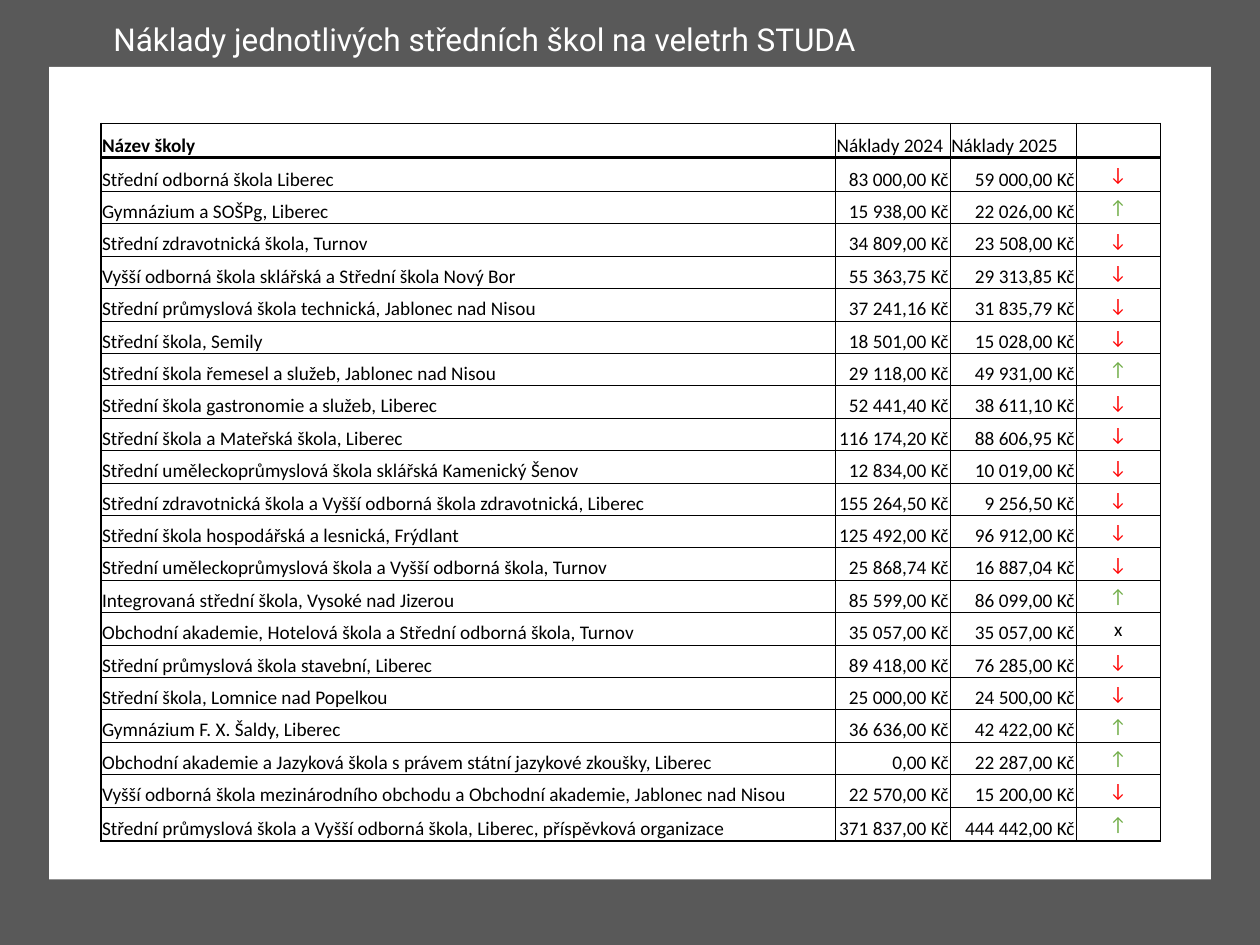
from lxml.etree import SubElement
from pptx import Presentation
from pptx.dml.color import RGBColor
from pptx.enum.shapes import MSO_SHAPE as Shape
from pptx.enum.text import MSO_ANCHOR as Anchor, PP_ALIGN as Align
from pptx.oxml.ns import qn
from pptx.util import Inches, Pt

COLORS = {
    "backdrop": "595959",
    "white": "FFFFFF",
    "black": "000000",
    "↓": "FF0000",
    "↑": "70AD47",
    "x": "000000",
}

# School, costs in 2024, costs in 2025
COSTS = [
    ("Střední odborná škola Liberec", 83000, 59000),
    ("Gymnázium a SOŠPg, Liberec", 15938, 22026),
    ("Střední zdravotnická škola, Turnov", 34809, 23508),
    ("Vyšší odborná škola sklářská a Střední škola Nový Bor", 55363.75, 29313.85),
    ("Střední průmyslová škola technická, Jablonec nad Nisou", 37241.16, 31835.79),
    ("Střední škola, Semily", 18501, 15028),
    ("Střední škola řemesel a služeb, Jablonec nad Nisou", 29118, 49931),
    ("Střední škola gastronomie a služeb, Liberec", 52441.40, 38611.10),
    ("Střední škola a Mateřská škola, Liberec", 116174.20, 88606.95),
    ("Střední uměleckoprůmyslová škola sklářská Kamenický Šenov", 12834, 10019),
    ("Střední zdravotnická škola a Vyšší odborná škola zdravotnická, Liberec", 155264.50, 9256.50),
    ("Střední škola hospodářská a lesnická, Frýdlant", 125492, 96912),
    ("Střední uměleckoprůmyslová škola a Vyšší odborná škola, Turnov", 25868.74, 16887.04),
    ("Integrovaná střední škola, Vysoké nad Jizerou", 85599, 86099),
    ("Obchodní akademie, Hotelová škola a Střední odborná škola, Turnov", 35057, 35057),
    ("Střední průmyslová škola stavební, Liberec", 89418, 76285),
    ("Střední škola, Lomnice nad Popelkou", 25000, 24500),
    ("Gymnázium F. X. Šaldy, Liberec", 36636, 42422),
    ("Obchodní akademie a Jazyková škola s právem státní jazykové zkoušky, Liberec", 0, 22287),
    ("Vyšší odborná škola mezinárodního obchodu a Obchodní akademie, Jablonec nad Nisou", 22570, 15200),
    ("Střední průmyslová škola a Vyšší odborná škola, Liberec, příspěvková organizace", 371837, 444442),
]


def crowns(amount):
    return f"{amount:,.2f} Kč".translate({ord(","): " ", ord("."): ","})


def add_border(cell, side, points):
    line = SubElement(cell._tc.get_or_add_tcPr(), qn(f"a:ln{side}"), w=str(Pt(points)))
    fill = SubElement(line, qn("a:solidFill"))
    SubElement(fill, qn("a:srgbClr"), val=COLORS["black"])


deck = Presentation()
deck.slide_width, deck.slide_height = Inches(10), Inches(7.5)
page = deck.slides.add_slide(deck.slide_layouts[5])

# Dark backdrop and white panel
for color, bounds in [("backdrop", (0, 0, 10, 7.5)), ("white", (0.39, 0.53, 9.22, 6.45))]:
    panel = page.shapes.add_shape(Shape.RECTANGLE, *map(Inches, bounds))
    panel.shadow.inherit = False
    panel.fill.solid()
    panel.fill.fore_color.rgb = RGBColor.from_string(COLORS[color])
    panel.line.fill.background()

# Table content, with the trend taken from the two years
rows = [("Název školy", "Náklady 2024", "Náklady 2025", "")]
for school, before, after in COSTS:
    trend = "↑" if after > before else "↓" if after < before else "x"
    rows.append((school, crowns(before), crowns(after), trend))

# Table grid
widths = [5.83, 0.91, 1, 0.67]
last_row, last_column = len(rows) - 1, len(widths) - 1
tall = 0.27
regular = (5.7 - 3 * tall) / (len(rows) - 3)
frame = page.shapes.add_table(len(rows), len(widths), Inches(0.8), Inches(0.98), Inches(8.4), Inches(5.7))
table = frame.table
table.first_row = table.horz_banding = False
for column, width in zip(table.columns, widths):
    column.width = Inches(width)
for r, row in enumerate(table.rows):
    row.height = Inches(tall if r in (0, 1, last_row) else regular)

# Table cells
for r, values in enumerate(rows):
    for c, value in enumerate(values):
        cell = table.cell(r, c)
        cell.margin_left = cell.margin_right = cell.margin_top = Inches(0.01)
        cell.margin_bottom = 0
        is_trend = r > 0 and c == last_column
        cell.vertical_anchor = Anchor.MIDDLE if is_trend else Anchor.BOTTOM
        add_border(cell, "L", 1 if c == 0 else 0.5)
        add_border(cell, "R", 1 if c == last_column else 0.5)
        add_border(cell, "T", {0: 1, 1: 2}.get(r, 0.5))
        add_border(cell, "B", {0: 2, last_row: 1}.get(r, 0.5))
        cell.fill.background()

        para = cell.text_frame.paragraphs[0]
        para.text = value
        if r > 0:
            para.alignment = [Align.LEFT, Align.RIGHT, Align.RIGHT, Align.CENTER][c]
        for span in para.runs:
            span.font.name = "Calibri"
            span.font.size = Pt(11)
            span.font.bold = r == 0 and c == 0
            span.font.color.rgb = RGBColor.from_string(COLORS[value if is_trend else "black"])
        if not value:
            # Keeps the empty header cell from growing its row
            SubElement(para._p, qn("a:endParaRPr"), sz="1100")

# Title, brought in front of the backdrop
title = page.shapes.title
title.element.getparent().append(title.element)
title.left, title.top, title.width, title.height = map(Inches, (0.8, 0.11, 8.4, 0.4))
title.text_frame.text = "Náklady jednotlivých středních škol na veletrh STUDA"
title.text_frame.word_wrap = True
title.text_frame.vertical_anchor = Anchor.TOP
para = title.text_frame.paragraphs[0]
para.alignment = Align.LEFT
span = para.runs[0]
span.font.name = "Roboto"
span.font.size = Pt(18)
span.font.color.rgb = RGBColor.from_string(COLORS["white"])

deck.save("out.pptx")
